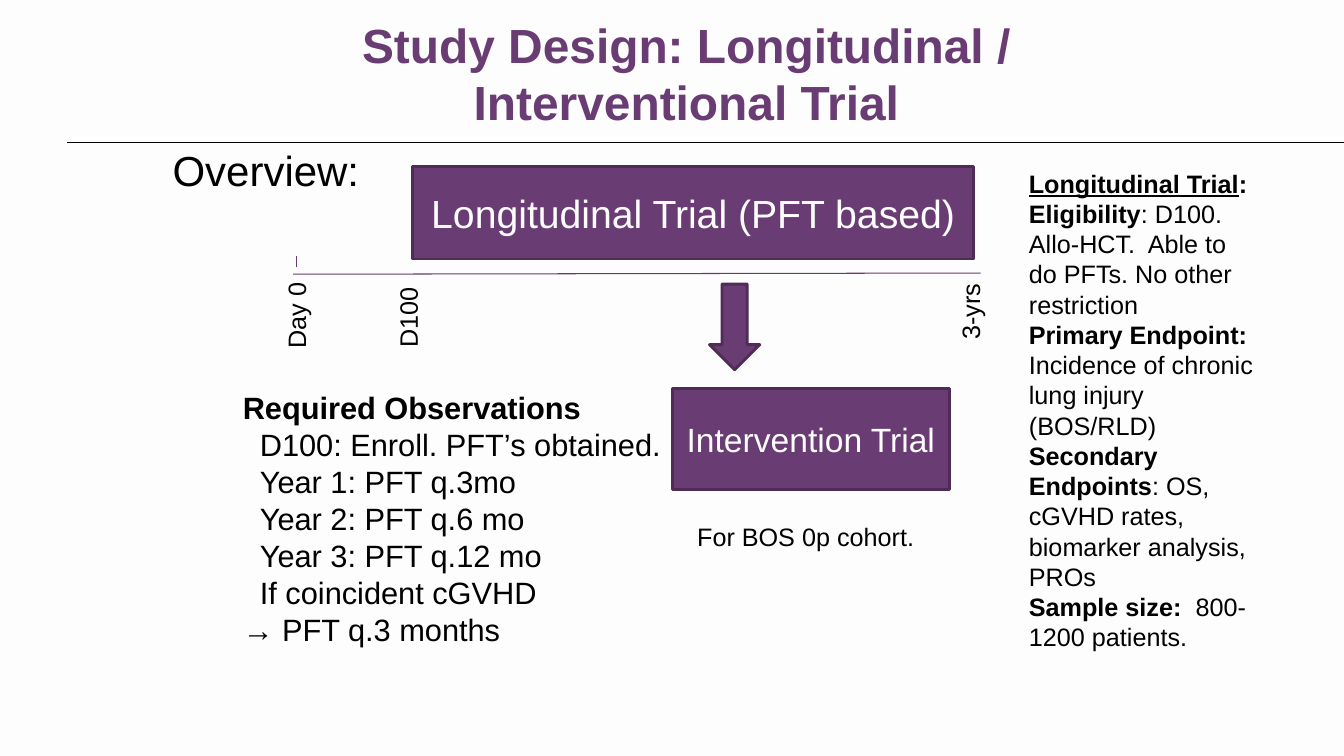
from pptx import Presentation
from pptx.dml.color import RGBColor
from pptx.enum.shapes import MSO_CONNECTOR as CONN, MSO_SHAPE as SHAPE
from pptx.enum.text import MSO_ANCHOR as ANCHOR, PP_ALIGN as ALIGN
from pptx.oxml.ns import qn
from pptx.util import Cm, Pt
from lxml.etree import SubElement

# Content: a paragraph is a list of (text, style) runs; b = bold, u = underline
TITLE = [[("Study Design: Longitudinal / Interventional Trial", "b")]]
HEADING = "Required Observations"
OBSERVATIONS = ["D100: Enroll. PFT’s obtained.", "Year 1: PFT q.3mo",
                "Year 2: PFT q.6 mo", "Year 3: PFT q.12 mo",
                "If coincident cGVHD"]
CONSEQUENCE = "→ PFT q.3 months"
SIDEBAR = [
    [("Longitudinal Trial", "bu"), (":", "b")],
    [("Eligibility", "b"),
     (": D100.  Allo-HCT.  Able to do PFTs. No other restriction", "")],
    [("Primary Endpoint: ", "b"),
     ("Incidence of chronic lung injury (BOS/RLD)", "")],
    [("Secondary Endpoints", "b"),
     (": OS, cGVHD rates, biomarker analysis, PROs", "")],
    [("Sample size:  ", "b"), ("800-1200 patients.", "")],
]

# Lengths in cm: left, top, width, height
TRIALS = [("Longitudinal Trial (PFT based)", 28, (10.39, 4.19, 14.15, 2.34)),
          ("Intervention Trial", 24, (16.94, 9.8, 6.99, 2.54))]
ARROW = (17.88, 7.16, 1.27, 2.16)
TIME_LABELS = [("Day 0", (6.32, 7.37, 2.29, 1.02)),
               ("D100", (9.25, 7.47, 2.06, 1.02)),
               ("3-yrs", (23.47, 7.32, 1.96, 1.02))]
LINES = [("000000", (1.7, 3.6, 33.87, 3.6)),
         ("683973", (7.39, 6.91, 24.71, 6.88)),
         ("683973", (7.47, 6.73, 7.47, 6.45))]
PURPLE, EDGE, PAPER, BLACK = "693C74", "4E2C56", "FDFDFD", "000000"
INDENT = 0.43


def rgb(color):
    return RGBColor.from_string(color)


def write(tf, paragraphs, size, color=BLACK, align=ALIGN.LEFT, anchor=ANCHOR.TOP):
    tf.word_wrap = True
    tf.vertical_anchor = anchor
    for i, runs in enumerate(paragraphs):
        p = tf.add_paragraph() if i else tf.paragraphs[0]
        p.alignment = align
        p.font.name, p.font.size = "Arial", Pt(size)
        p.font.color.rgb = rgb(color)
        for text, style in runs:
            r = p.add_run()
            r.text = text
            if "b" in style:
                r.font.bold = True
            if "u" in style:
                r.font.underline = True


def add_text(box, paragraphs, size, **options):
    sp = s.shapes.add_textbox(*map(Cm, box))
    write(sp.text_frame, paragraphs, size, **options)
    return sp


def add_purple(kind, box):
    sp = s.shapes.add_shape(kind, *map(Cm, box))
    sp.shadow.inherit = False
    sp.fill.solid()
    sp.fill.fore_color.rgb = rgb(PURPLE)
    sp.line.color.rgb = rgb(EDGE)
    sp.line.width = Pt(2)
    return sp


prs = Presentation()
prs.slide_width, prs.slide_height = Cm(33.87), Cm(19.05)
s = prs.slides.add_slide(prs.slide_layouts[6])
s.background.fill.solid()
s.background.fill.fore_color.rgb = rgb(PAPER)

# Title and overview
title = add_text((5.87, 0.23, 22.86, 3.18), TITLE, 34.2, color=PURPLE,
                 align=ALIGN.CENTER, anchor=ANCHOR.BOTTOM)
title.fill.solid()
title.fill.fore_color.rgb = rgb(PAPER)
add_text((4.1, 3.53, 23.5, 12.98), [[("Overview:", "")]], 30)

# Required observations, with the schedule indented
notes = add_text((5.87, 9.68, 11.63, 6.83),
                 [[(HEADING, "b")]] + [[(t, "")] for t in OBSERVATIONS + [CONSEQUENCE]], 22)
for p in notes.text_frame.paragraphs[1:-1]:
    pPr = p._p.get_or_add_pPr()
    pPr.set("marL", str(Cm(INDENT)))
    pPr.set("indent", "0")

# Trials and the arrow between them
for text, size, box in TRIALS:
    write(add_purple(SHAPE.RECTANGLE, box).text_frame, [[(text, "")]], size,
          color=PAPER, align=ALIGN.CENTER, anchor=ANCHOR.MIDDLE)
add_purple(SHAPE.DOWN_ARROW, ARROW)
add_text((17.32, 13, 6.55, 1.02), [[("For BOS 0p cohort.", "")]], 18)

# Title rule, timeline and its tick
for color, ends in LINES:
    line = s.shapes.add_connector(CONN.STRAIGHT, *map(Cm, ends))
    line.line.color.rgb = rgb(color)
    line.line.width = Pt(0.75)
    SubElement(line._element.spPr, qn("a:effectLst"))
for text, box in TIME_LABELS:
    add_text(box, [[(text, "")]], 18).rotation = 270

# Sidebar
add_text((25.68, 4.11, 6.35, 12.57), SIDEBAR, 18)

prs.save("out.pptx")
